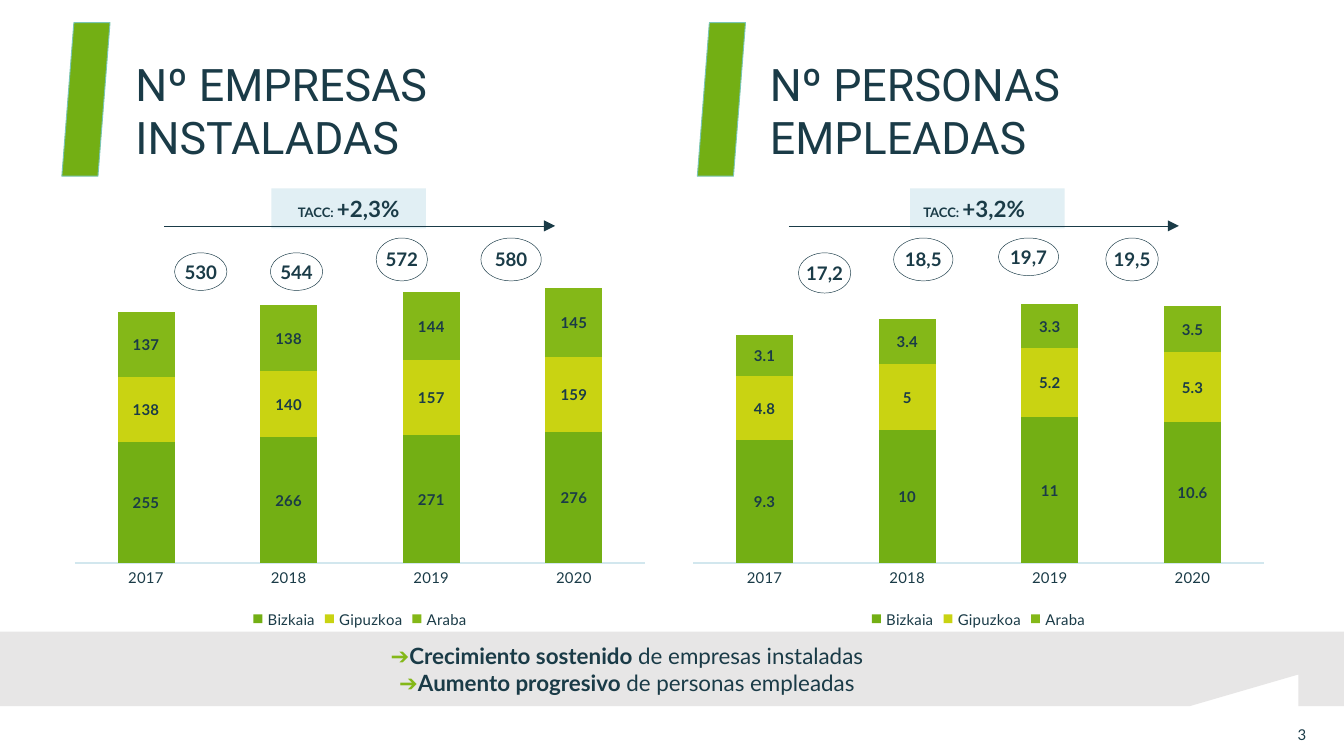
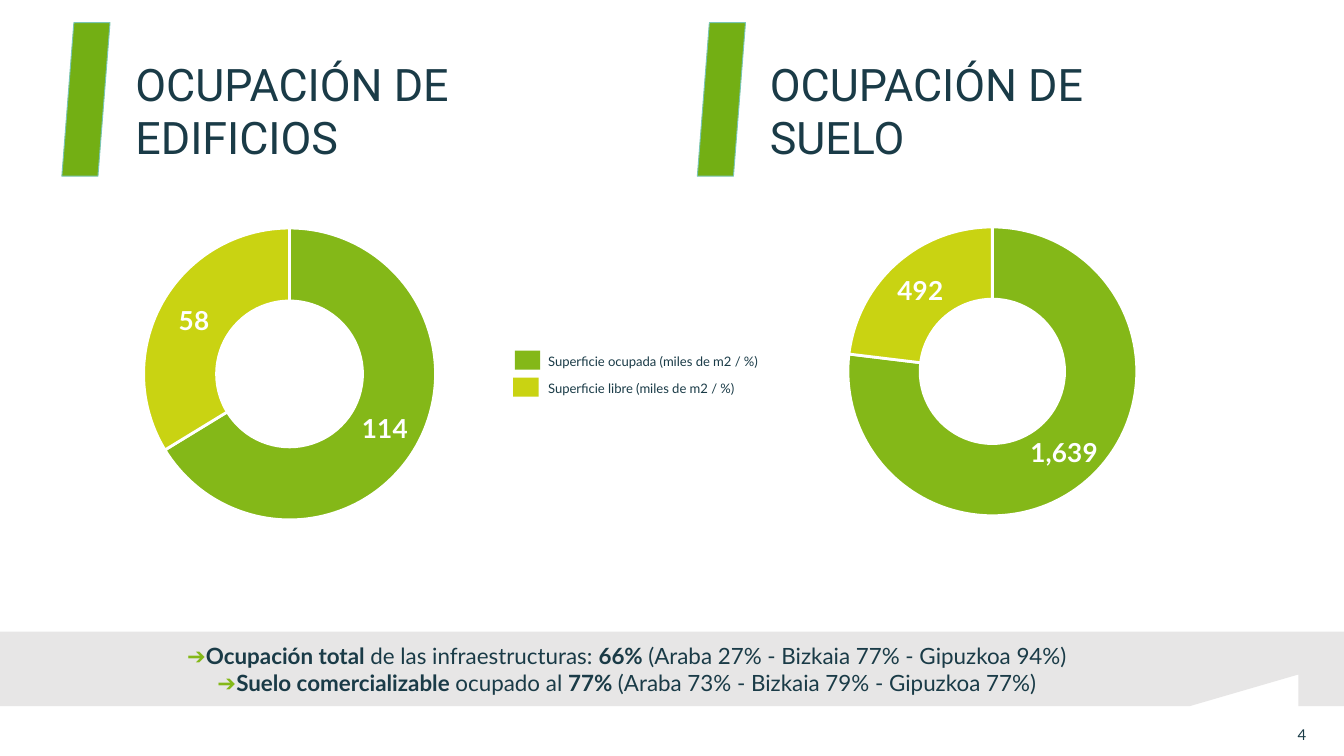
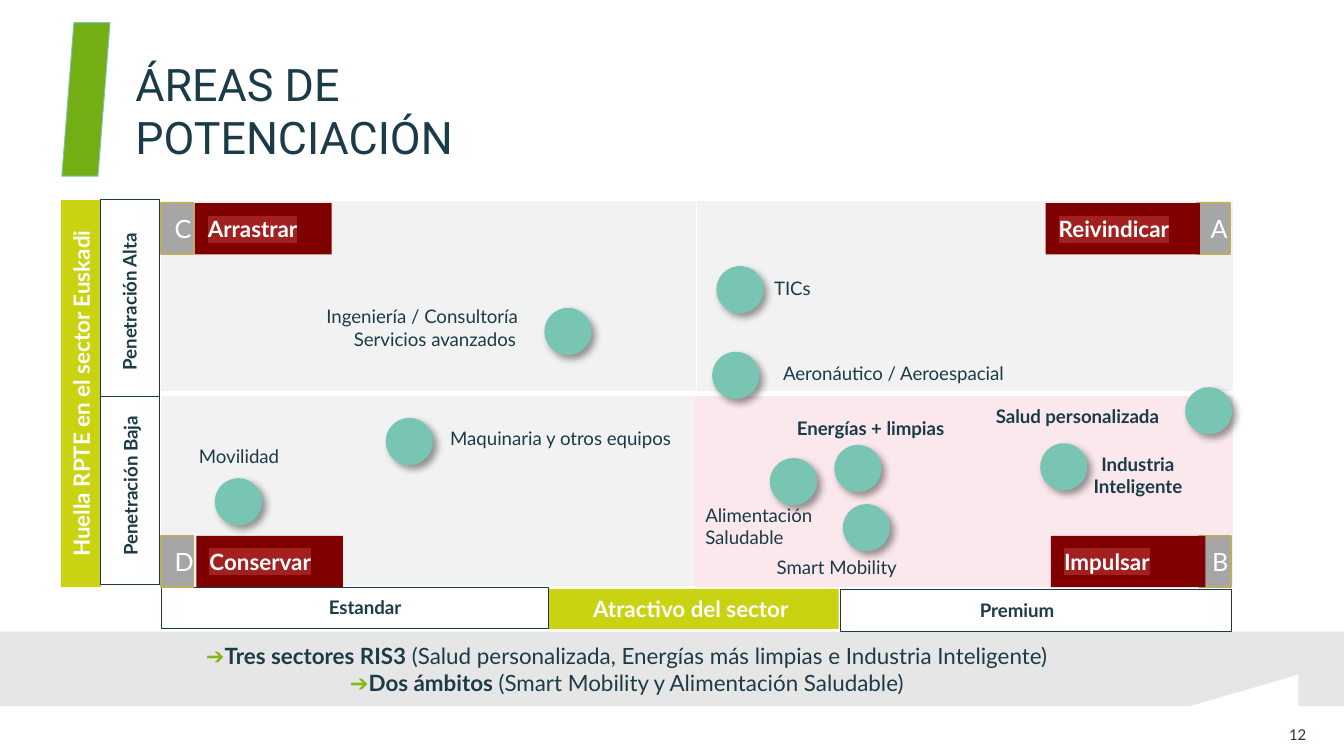
from lxml.etree import SubElement
from pptx import Presentation
from pptx.chart.data import CategoryChartData
from pptx.dml.color import RGBColor
from pptx.enum.chart import XL_CHART_TYPE, XL_LEGEND_POSITION, XL_TICK_MARK
from pptx.enum.shapes import MSO_CONNECTOR, MSO_SHAPE
from pptx.enum.text import MSO_ANCHOR, PP_ALIGN
from pptx.oxml import parse_xml
from pptx.oxml.ns import nsdecls, qn
from pptx.util import Cm, Pt

C = {
    "ink": "1A3B47", "green": "73AF14", "leaf": "84B818", "lime": "C9D312",
    "teal": "79C5B3", "pale": "E1EFF4", "axis": "D2E7EE", "band": "E7E6E6",
    "cell": "F2F2F2", "pink": "FAE8EC", "red": "800000", "mark": "A32020",
    "grey": "A6A6A6", "gold": "BDAD5F", "white": "FFFFFF",
}
RGB = {name: RGBColor.from_string(value) for name, value in C.items()}
LEFT, CENTER, RIGHT = PP_ALIGN.LEFT, PP_ALIGN.CENTER, PP_ALIGN.RIGHT
TOP, MIDDLE = MSO_ANCHOR.TOP, MSO_ANCHOR.MIDDLE
RECT, OVAL = MSO_SHAPE.RECTANGLE, MSO_SHAPE.OVAL


def box(s, kind, x, y, w, h, fill=None, line=None, weight=0.5,
        align=LEFT, anchor=TOP, inset=None):
    """Add a preset shape, or a text box when kind is None."""
    pos = Cm(x), Cm(y), Cm(w), Cm(h)
    if kind is None:
        sp = s.shapes.add_textbox(*pos)
    else:
        sp = s.shapes.add_shape(kind, *pos)
        sp.shadow.inherit = False
        if fill:
            sp.fill.solid()
            sp.fill.fore_color.rgb = RGB[fill]
        else:
            sp.fill.background()
        if line:
            sp.line.color.rgb = RGB[line]
            sp.line.width = Pt(weight)
        else:
            sp.line.fill.background()
    tf = sp.text_frame
    tf.word_wrap = True
    tf.vertical_anchor = anchor
    tf.paragraphs[0].alignment = align
    if inset is not None:
        tf.margin_left = tf.margin_right = tf.margin_top = tf.margin_bottom = Cm(inset)
    return sp


def add_run(p, text, size, bold=False, colour="ink", font="Lato"):
    r = p.add_run()
    r.text = text
    r.font.size = Pt(size)
    r.font.bold = bold
    r.font.color.rgb = RGB[colour]
    r.font.name = font
    return r


prs = Presentation()
prs.slide_width, prs.slide_height = Cm(25.4), Cm(14.29)

# Shared frame: page number, titles and conclusion band (text, bold)
frames = [
    ("3", ["Nº EMPRESAS INSTALADAS", "Nº PERSONAS EMPLEADAS"], [
        [("Crecimiento sostenido ", True), ("de empresas instaladas", False)],
        [("Aumento progresivo ", True), ("de personas empleadas", False)]]),
    ("4", ["OCUPACIÓN DE EDIFICIOS", "OCUPACIÓN DE SUELO"], [
        [("Ocupación total ", True), ("de las infraestructuras: ", False),
         ("66% ", True), ("(Araba 27% - Bizkaia 77% - Gipuzkoa 94%)", False)],
        [("Suelo comercializable ", True), ("ocupado al ", False),
         ("77% ", True), ("(Araba 73% - Bizkaia 79% - Gipuzkoa 77%)", False)]]),
    ("12", ["ÁREAS DE POTENCIACIÓN"], [
        [("Tres sectores RIS3 ", True),
         ("(Salud personalizada, Energías más limpias e Industria Inteligente)", False)],
        [("Dos ámbitos ", True), ("(Smart Mobility y Alimentación Saludable)", False)]]),
]
band_points = [(25.4, 11.94), (25.4, 13.35), (24.54, 13.35), (24.54, 12.75),
               (22.48, 13.35), (0, 13.35)]
for number, titles, conclusions in frames:
    s = prs.slides.add_slide(prs.slide_layouts[6])
    sp = box(s, None, 23.9, 13.54, 0.79, 0.69, align=RIGHT, anchor=MIDDLE, inset=0)
    add_run(sp.text_frame.paragraphs[0], number, 8)

    for title, bar_x, title_x in zip(titles, (1.17, 13.18), (2.31, 14.3)):
        box(s, MSO_SHAPE.PARALLELOGRAM, bar_x, 0.43, 0.91, 2.9, "green", "teal")
        sp = box(s, None, title_x, 0.94, 7.98, 2.31)
        add_run(sp.text_frame.paragraphs[0], title, 24, font="Roboto")

    fb = s.shapes.build_freeform(Cm(0), Cm(11.94))
    fb.add_line_segments([(Cm(x), Cm(y)) for x, y in band_points])
    sp = fb.convert_to_shape()
    sp.shadow.inherit = False
    sp.fill.solid()
    sp.fill.fore_color.rgb = RGB["band"]
    sp.line.fill.background()
    tf = sp.text_frame
    tf.word_wrap = True
    tf.vertical_anchor = MIDDLE
    tf.margin_left, tf.margin_right = Cm(2), Cm(3.7)
    for i, parts in enumerate(conclusions):
        p = tf.add_paragraph() if i else tf.paragraphs[0]
        p.alignment = CENTER
        add_run(p, "➔", 12, True, "leaf", "Arial")
        for text, bold in parts:
            add_run(p, text, 12, bold)

growth, occupation, areas = prs.slides

# Slide 1: stacked columns with growth rate, arrow and yearly totals
s = growth
panels = [
    (1.19, 5.13, CENTER, "+2,3%", 3.1, 10.49,
     [(255, 266, 271, 276), (138, 140, 157, 159), (137, 138, 144, 145)],
     [("530", 3.3, 4.78, 0.99, 0.71), ("544", 5.11, 4.78, 0.99, 0.71),
      ("572", 7.11, 4.5, 0.97, 0.81), ("580", 9.09, 4.5, 1.14, 0.81)]),
    (12.88, 17.2, LEFT, "+3,2%", 14.91, 22.28,
     [(9.3, 10, 11, 10.6), (4.8, 5, 5.2, 5.3), (3.1, 3.4, 3.3, 3.5)],
     [("17,2", 15.09, 4.78, 0.99, 0.76), ("18,5", 16.89, 4.5, 1.12, 0.81),
      ("19,7", 18.87, 4.5, 1.14, 0.71), ("19,5", 20.9, 4.5, 0.99, 0.81)]),
]
for chart_x, rate_x, align, rate, start, end, values, totals in panels:
    data = CategoryChartData()
    data.categories = ["2017", "2018", "2019", "2020"]
    for name, vals in zip(("Bizkaia", "Gipuzkoa", "Araba"), values):
        data.add_series(name, vals)
    chart = s.shapes.add_chart(XL_CHART_TYPE.COLUMN_STACKED, Cm(chart_x), Cm(4.22),
                               Cm(11.23), Cm(7.75), data).chart
    chart.has_title = False
    chart.font.name, chart.font.size = "Lato", Pt(8)
    chart.font.color.rgb = RGB["ink"]
    chart.has_legend = True
    chart.legend.position = XL_LEGEND_POSITION.BOTTOM
    chart.legend.include_in_layout = False
    chart.value_axis.visible = False
    chart.value_axis.has_major_gridlines = False
    axis = chart.category_axis
    axis.major_tick_mark = XL_TICK_MARK.NONE
    axis.format.line.color.rgb = RGB["axis"]
    axis.format.line.width = Pt(0.75)
    plot = chart.plots[0]
    plot.gap_width, plot.overlap = 150, 100
    for series, colour in zip(plot.series, ("green", "lime", "leaf")):
        series.format.fill.solid()
        series.format.fill.fore_color.rgb = RGB[colour]
        labels = series.data_labels
        labels.show_value = True
        labels.font.name, labels.font.size, labels.font.bold = "Lato", Pt(8), True
        labels.font.color.rgb = RGB["ink"]

    sp = box(s, RECT, rate_x, 3.56, 2.92, 0.76, "pale", align=align)
    p = sp.text_frame.paragraphs[0]
    add_run(p, "TACC: ", 7, True)
    add_run(p, rate, 12, True)

    arrow = s.shapes.add_connector(MSO_CONNECTOR.STRAIGHT, Cm(start), Cm(4.27),
                                   Cm(end), Cm(4.27))
    arrow.line.color.rgb = RGB["ink"]
    arrow.line.width = Pt(0.25)
    SubElement(arrow.line._get_or_add_ln(), qn("a:tailEnd"), type="triangle")
    SubElement(arrow._element.spPr, qn("a:effectLst"))

    for total, x, y, w, h in totals:
        sp = box(s, OVAL, x, y, w, h, "white", "ink", 0.25, CENTER, MIDDLE, 0)
        sp.text_frame.word_wrap = False
        add_run(sp.text_frame.paragraphs[0], total, 10, True)

# Slide 2: doughnuts with a common legend
s = occupation
for x, y, hole, vals in [(0.28, 3.96, 50, (114, 58)), (13.56, 3.94, 60, (1639, 492))]:
    data = CategoryChartData()
    data.categories = ["1", "2"]
    data.add_series("Series 1", vals)
    chart = s.shapes.add_chart(XL_CHART_TYPE.DOUGHNUT, Cm(x), Cm(y),
                               Cm(10.39), Cm(6.22), data).chart
    chart.has_title = chart.has_legend = False
    chart.font.name, chart.font.size = "Lato", Pt(10)
    chart.font.color.rgb = RGB["ink"]
    plot = chart.plots[0]
    plot.vary_by_categories = True
    plot._element.find(qn("c:holeSize")).set("val", str(hole))
    series = plot.series[0]
    for i, colour in enumerate(("leaf", "lime")):
        fmt = series.points[i].format
        fmt.fill.solid()
        fmt.fill.fore_color.rgb = RGB[colour]
        fmt.line.color.rgb = RGB["white"]
        fmt.line.width = Pt(1.5)
    labels = series.data_labels
    labels.show_value = True
    labels.show_percentage = False
    labels.number_format, labels.number_format_is_linked = "#,##0", False
    labels.font.name, labels.font.size, labels.font.bold = "Lato", Pt(14), True
    labels.font.color.rgb = RGB["white"]

for x, y, colour, text in [(9.73, 6.63, "leaf", "Superficie ocupada (miles de m2 / %)"),
                           (9.7, 7.14, "lime", "Superficie libre (miles de m2 / %)")]:
    box(s, RECT, x, y, 0.48, 0.36, colour)
    sp = box(s, None, 10.11, y - 0.08, 4.6, 0.56)
    add_run(sp.text_frame.paragraphs[0], text, 7)

# Slide 3: matrix background
s = areas
frame = s.shapes.add_table(2, 2, Cm(3.02), Cm(3.78), Cm(20.29), Cm(7.32))
table = frame.table
table.first_row = table.horz_banding = False
for row in range(2):
    for col in range(2):
        cell = table.cell(row, col)
        tcPr = cell._tc.get_or_add_tcPr()
        middle = "a:lnT" if row else "a:lnB"
        for side in ("a:lnL", "a:lnR", "a:lnT", "a:lnB"):
            ln = SubElement(tcPr, qn(side), w=str(Pt(3 if side == middle else 1)))
            SubElement(SubElement(ln, qn("a:solidFill")), qn("a:srgbClr"), val=C["white"])
        cell.fill.solid()
        cell.fill.fore_color.rgb = RGB["cell"]
box(s, RECT, 13.13, 7.49, 10.16, 3.61, "pink")

# Axis names and axis boxes
sp = box(s, RECT, -2.13, 7.06, 7.32, 0.76, "lime", align=CENTER)
sp.rotation = 270
add_run(sp.text_frame.paragraphs[0], "Huella RPTE en el sector Euskadi", 12, True, "white")
sp = box(s, RECT, 10.36, 11.13, 5.49, 0.76, "lime", align=CENTER, anchor=MIDDLE)
sp.text_frame.word_wrap = False
add_run(sp.text_frame.paragraphs[0], "Atractivo del sector ", 12, True, "white")
for x, y, w, h in [(1.9, 3.78, 1.12, 3.71), (1.9, 7.49, 1.12, 3.56),
                   (3.05, 11.1, 7.32, 0.79), (15.88, 11.15, 7.39, 0.79)]:
    box(s, RECT, x, y, w, h, line="ink")

# Sector dots
dots = [(13.54, 5.03), (10.29, 5.82), (7.29, 7.9), (4.06, 9.04), (14.55, 8.66),
        (13.46, 6.65), (15.93, 9.53), (15.77, 8.41), (19.66, 8.38), (22.4, 7.32)]
for x, y in dots:
    sp = box(s, OVAL, x, y, 0.89, 0.89, "teal")
    effects = sp._element.spPr.find(qn("a:effectLst"))
    effects.append(parse_xml(
        f'<a:outerShdw {nsdecls("a")} blurRad="{Pt(4)}" dist="{Pt(3)}" dir="2700000" '
        'algn="tl" rotWithShape="0"><a:srgbClr val="000000"><a:alpha val="40000"/>'
        '</a:srgbClr></a:outerShdw>'))

# Sector and axis labels: x, y, w, h, text, bold, alignment, rotation
labels = [
    (14.38, 5.11, 1.96, 0.69, "TICs", False, LEFT, 0),
    (5.92, 5.64, 4.6, 1.12, "Ingeniería / Consultoría", False, LEFT, 0),
    (14.55, 6.71, 5.77, 0.69, "Aeronáutico / Aeroespacial", False, LEFT, 0),
    (8.26, 7.95, 5.56, 0.69, "Maquinaria y otros equipos", False, LEFT, 0),
    (3.51, 8.28, 2.06, 0.69, "Movilidad", False, LEFT, 0),
    (14.43, 10.39, 4.01, 0.69, "Smart Mobility", False, LEFT, 0),
    (13.08, 9.4, 4.01, 1.12, "Alimentación Saludable", False, LEFT, 0),
    (14.81, 7.75, 4.01, 0.69, "Energías + limpias", True, LEFT, 0),
    (20.02, 8.43, 2.97, 1.12, "Industria Inteligente", True, CENTER, 0),
    (18.57, 7.52, 4.01, 0.69, "Salud personalizada", True, LEFT, 0),
    (5.87, 11.13, 2.06, 0.69, "Estandar", True, CENTER, 0),
    (18.19, 11.2, 2.06, 0.69, "Premium", True, CENTER, 0),
    (0.81, 5.36, 3.28, 0.69, "Penetración Alta", True, CENTER, 270),
    (0.64, 8.84, 3.66, 0.69, "Penetración Baja", True, CENTER, 270),
]
for x, y, w, h, text, bold, align, rotation in labels:
    sp = box(s, None, x, y, w, h, align=align)
    sp.rotation = rotation
    add_run(sp.text_frame.paragraphs[0], text, 10, bold)
    if text.startswith("Ingeniería"):
        p = sp.text_frame.add_paragraph()
        p.alignment = CENTER
        add_run(p, "Servicios avanzados", 10)

# Quadrant letters and strategies
quadrants = [("A", 22.63, 3.84, "Reivindicar", 19.76, 2.92),
             ("B", 22.66, 10.13, "Impulsar", 19.86, 2.92),
             ("C", 3.05, 3.84, "Arrastrar", 3.68, 2.59),
             ("D", 3.05, 10.13, "Conservar", 3.71, 2.77)]
for letter, x, y, strategy, tag_x, tag_w in quadrants:
    sp = box(s, RECT, x, y, 0.61, 0.97, "grey", "gold", 1, CENTER, MIDDLE)
    add_run(sp.text_frame.paragraphs[0], letter, 13.5, colour="white")
    sp = box(s, RECT, tag_x, y, tag_w, 0.97, "red", anchor=MIDDLE)
    r = add_run(sp.text_frame.paragraphs[0], strategy, 12, True, "white")
    r.font._element.find(qn("a:solidFill")).addnext(parse_xml(
        f'<a:highlight {nsdecls("a")}><a:srgbClr val="{C["mark"]}"/></a:highlight>'))

prs.save("out.pptx")
